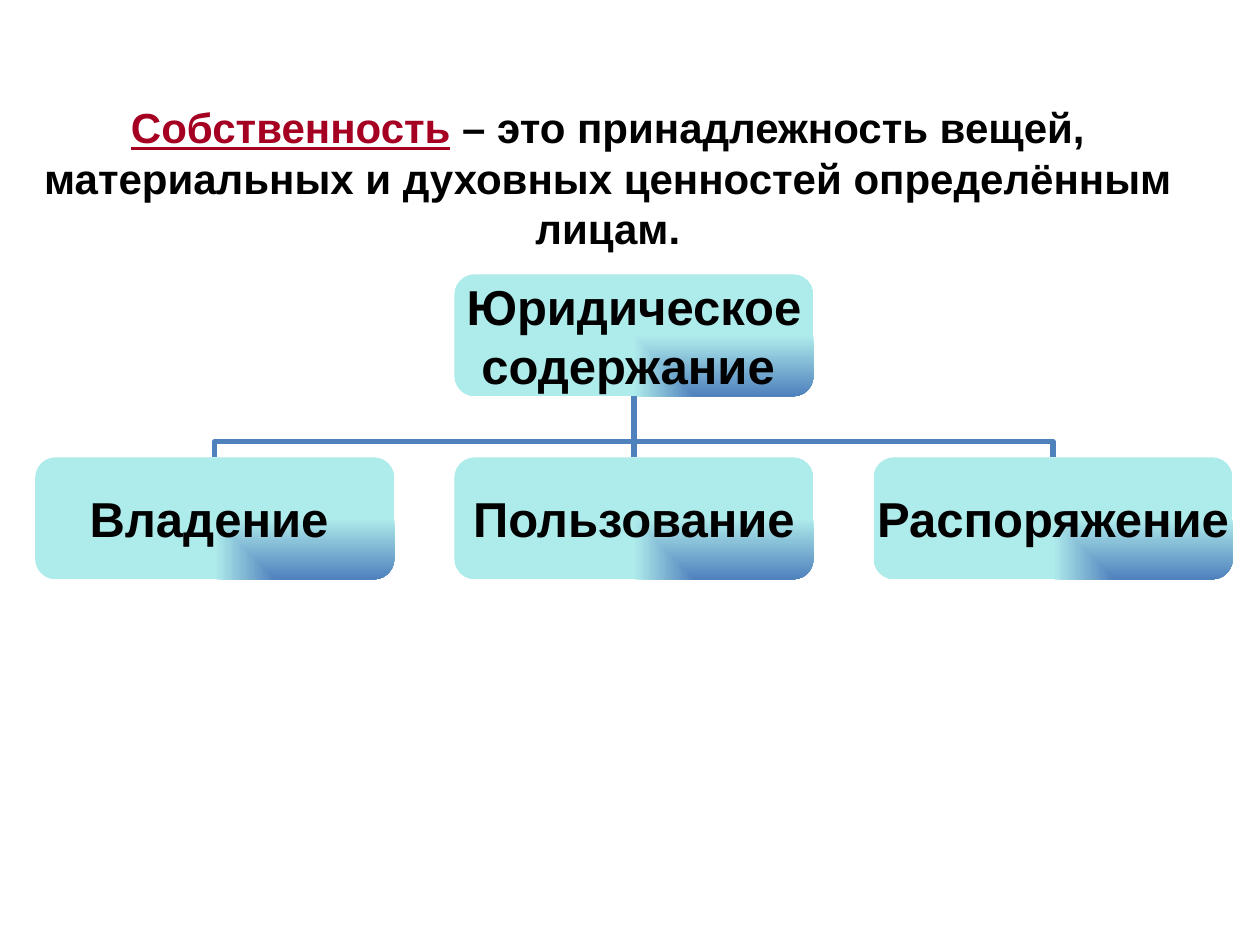
from dataclasses import dataclass

from lxml.etree import SubElement
from pptx import Presentation
from pptx.dml.color import RGBColor
from pptx.enum.shapes import MSO_CONNECTOR as Link, MSO_SHAPE as Preset
from pptx.enum.text import MSO_ANCHOR as Anchor, MSO_AUTO_SIZE as AutoSize, PP_ALIGN as Align
from pptx.oxml.ns import qn
from pptx.util import Cm, Pt

BLUE, AQUA, RED, BLACK = "4F81BD", "AEEBEB", "A50021", "000000"
BOX_WIDTH, BOX_HEIGHT = Cm(7.24), Cm(2.46)
FIRST_LEFT, COLUMN_STEP = Cm(0.71), Cm(8.45)
ROOT_TOP, CHILD_TOP = Cm(5.53), Cm(9.22)
BEND = 25900  # share of the way up from a child, in 1/1000 percent


@dataclass
class Span:
    text: str
    size: int = 28
    color: str = BLACK
    underline: bool = False


@dataclass
class Node:
    column: int
    top: int
    lines: list[list[Span]]


ROOT = Node(1, ROOT_TOP, [[Span("Юридическое")], [Span("содержание"), Span(" ", 24)]])
CHILDREN = [
    Node(0, CHILD_TOP, [[Span("Владение"), Span(" ", 24)]]),
    Node(1, CHILD_TOP, [[Span("Пользование")]]),
    Node(2, CHILD_TOP, [[Span("Распоряжение")]]),
]
DEFINITION = [[
    Span("Собственность", 24, RED, True),
    Span(" – это принадлежность вещей, материальных и духовных ценностей "
         "определённым лицам.", 24),
]]


def rgb(color: str) -> RGBColor:
    return RGBColor.from_string(color)


def set_all(target, values: dict) -> None:
    for name, value in values.items():
        setattr(target, name, value)


def write(frame, lines: list[list[Span]]) -> None:
    for index, spans in enumerate(lines):
        para = frame.add_paragraph() if index else frame.paragraphs[0]
        para.alignment = Align.CENTER
        for span in spans:
            run = para.add_run()
            run.text = span.text
            set_all(run.font, {"name": "Arial", "size": Pt(span.size), "bold": True,
                               "underline": span.underline})
            run.font.color.rgb = rgb(span.color)


def fill_from_corner(box, corner: str, rest: str) -> None:
    """Spread a rectangular gradient from the bottom right corner."""
    box.fill.gradient()
    gradient = box.fill._xPr.find(qn("a:gradFill"))
    for child in list(gradient):
        gradient.remove(child)
    stops = SubElement(gradient, qn("a:gsLst"))
    for position, color in ((0, corner), (100000, rest)):
        stop = SubElement(stops, qn("a:gs"), pos=str(position))
        SubElement(stop, qn("a:srgbClr"), val=color)
    shade = SubElement(gradient, qn("a:path"), path="rect")
    SubElement(shade, qn("a:fillToRect"), l="100000", t="100000")


def draw_node(page, node: Node):
    left = FIRST_LEFT + node.column * COLUMN_STEP
    box = page.shapes.add_shape(Preset.ROUNDED_RECTANGLE, left, node.top,
                                BOX_WIDTH, BOX_HEIGHT)
    box.shadow.inherit = False
    box.line.fill.background()
    fill_from_corner(box, BLUE, AQUA)
    set_all(box.text_frame, {"margin_left": 0, "margin_right": 0, "margin_top": 0,
                             "margin_bottom": 0, "word_wrap": False,
                             "vertical_anchor": Anchor.MIDDLE})
    write(box.text_frame, node.lines)
    return box


def style_line(line) -> None:
    line.line.color.rgb = rgb(BLUE)
    line.line.width = Pt(3)
    SubElement(line._element.spPr, qn("a:effectLst"))


def join_straight(page, child, root) -> None:
    line = page.shapes.add_connector(Link.STRAIGHT, 0, 0, 0, 0)
    line.begin_connect(child, 0)
    line.end_connect(root, 2)
    style_line(line)


def join_bent(page, child, root) -> None:
    """Draw an elbow up from the child's top, turned so that it starts upright."""
    start_x, end_x = (box.left + box.width // 2 for box in (child, root))
    start_y, end_y = child.top, root.top + root.height
    center_x, center_y = (start_x + end_x) // 2, (start_y + end_y) // 2
    half_width, half_height = (start_y - end_y) // 2, abs(end_x - start_x) // 2
    side = 1 if start_x > end_x else -1
    line = page.shapes.add_connector(
        Link.ELBOW, center_x + side * half_width, center_y - half_height,
        center_x - side * half_width, center_y + half_height)
    shape_xml = line._element.spPr
    shape_xml.find(qn("a:xfrm")).set("rot", str((90 if side > 0 else 270) * 60000))
    guides = shape_xml.find(qn("a:prstGeom")).find(qn("a:avLst"))
    SubElement(guides, qn("a:gd"), name="adj1", fmla=f"val {BEND}")
    style_line(line)


def main() -> None:
    deck = Presentation()
    deck.slide_width, deck.slide_height = Cm(25.4), Cm(19.05)
    page = deck.slides.add_slide(deck.slide_layouts[6])

    definition = page.shapes.add_textbox(0, Cm(1.93), Cm(24.51), Cm(3.33))
    set_all(definition.text_frame, {"word_wrap": True,
                                    "auto_size": AutoSize.SHAPE_TO_FIT_TEXT})
    write(definition.text_frame, DEFINITION)

    root = draw_node(page, ROOT)
    for node in CHILDREN:
        child = draw_node(page, node)
        join = join_straight if node.column == ROOT.column else join_bent
        join(page, child, root)

    deck.save("out.pptx")


if __name__ == "__main__":
    main()
